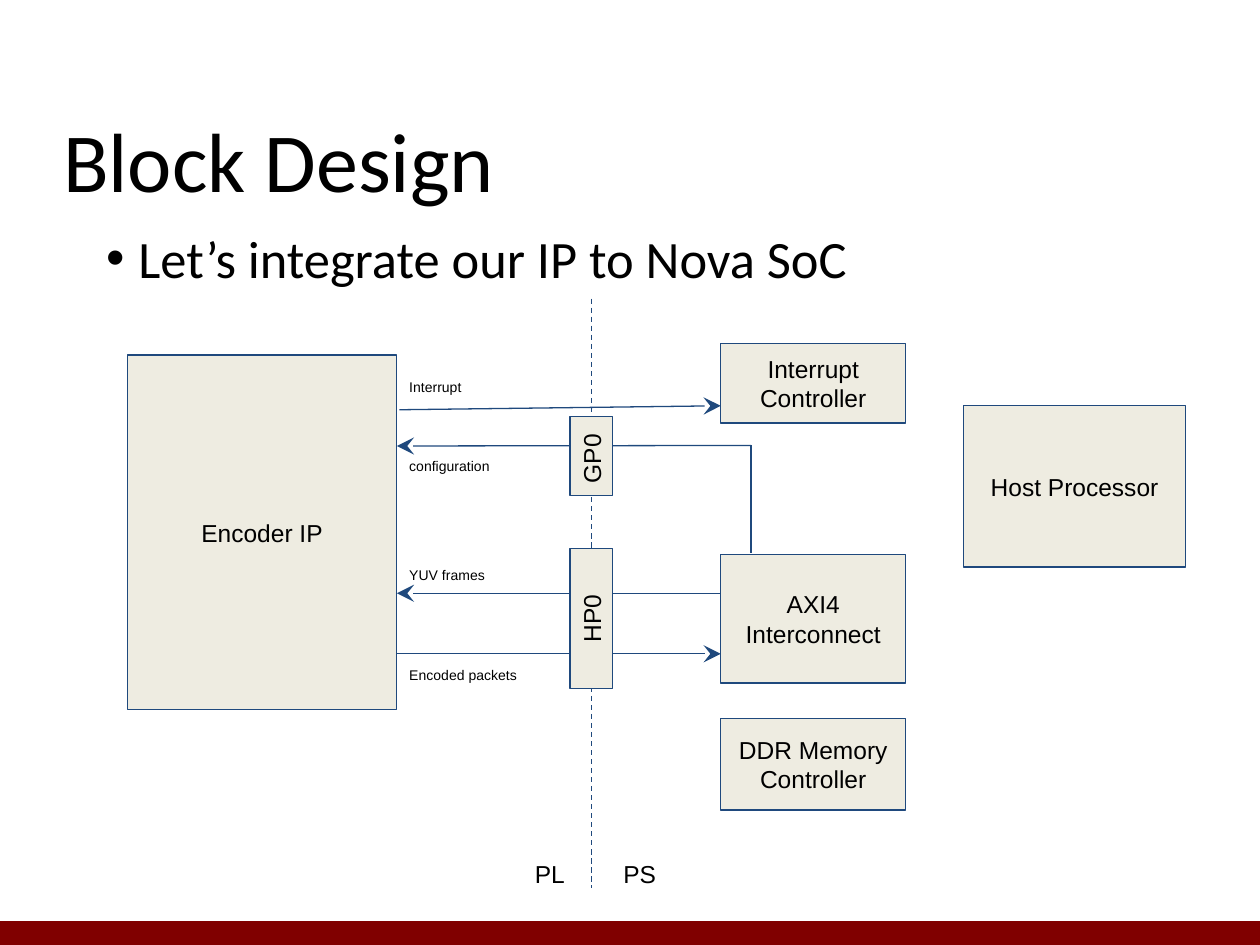
"""Build the block design slide of an encoder connected to a system on chip."""
from lxml import etree
from pptx import Presentation
from pptx.dml.color import RGBColor
from pptx.enum.dml import MSO_LINE
from pptx.enum.shapes import MSO_CONNECTOR, MSO_SHAPE
from pptx.enum.text import MSO_ANCHOR, MSO_AUTO_SIZE, PP_ALIGN
from pptx.oxml.ns import qn
from pptx.util import Cm, Pt

RECTANGLE = MSO_SHAPE.RECTANGLE
STRAIGHT = MSO_CONNECTOR.STRAIGHT
DASH = MSO_LINE.DASH
TOP, MIDDLE = MSO_ANCHOR.TOP, MSO_ANCHOR.MIDDLE
LEFT, CENTER = PP_ALIGN.LEFT, PP_ALIGN.CENTER
NO_FIT = MSO_AUTO_SIZE.NONE

BLACK = RGBColor(0x00, 0x00, 0x00)
NAVY = RGBColor(0x1F, 0x49, 0x7D)
CREAM = RGBColor(0xEE, 0xEC, 0xE1)
MAROON = RGBColor(0x80, 0x00, 0x00)

TITLE = "Block Design"
BULLET = "Let’s integrate our IP to Nova SoC"
TITLE_AREA = (1.27, 2.18, 22.86, 1.85)
BODY_AREA = (1.27, 4.42, 22.86, 12.6)
FOOTER_AREA = (0, 18.57, 25.45, 0.5)

ENCODER_EDGE = 8
CONTROLLER_LEFT, CONTROLLER_WIDTH = 14.53, 3.73
RISER = 15.14
DIVIDER = 11.92
PORT_WIDTH = 0.86

BLOCKS = [
    ("Encoder IP", 2.57, 7.16, ENCODER_EDGE - 2.57, 7.14),
    ("Host Processor", 19.43, 8.18, 4.47, 3.25),
]
CONTROLLERS = [
    ("Interrupt\nController", 6.93, 1.6),
    ("AXI4 Interconnect", 11.18, 2.59),
    ("DDR Memory Controller", 14.48, 1.85),
]
PORTS = [("HP0", 12.47, 2.82, CENTER), ("GP0", 9.19, 1.6, LEFT)]
SIGNALS = [
    ("Interrupt", 7.39),
    ("configuration", 8.97),
    ("YUV frames", 11.18),
    ("Encoded packets", 13.18),
]
SIDES = [("PL", 10.41), ("PS", 12.22)]
ARROWS = [
    (8.05, 8.26, CONTROLLER_LEFT, 8.18),
    (RISER, 8.98, ENCODER_EDGE, 8.99),
    (CONTROLLER_LEFT, 11.96, ENCODER_EDGE, 11.96),
    (ENCODER_EDGE, 13.18, CONTROLLER_LEFT, 13.18),
]


def set_attributes(target, values):
    for name, value in values.items():
        setattr(target, name, value)


def place(shape, area):
    names = ("left", "top", "width", "height")
    set_attributes(shape, dict(zip(names, map(Cm, area))))


def write(shape, text, size, name="Arial", alignment=LEFT, anchor=TOP, insets=(0.25, 0.25)):
    frame = shape.text_frame
    horizontal, vertical = map(Cm, insets)
    frame.text = text
    set_attributes(frame, {
        "word_wrap": True, "auto_size": NO_FIT, "vertical_anchor": anchor,
        "margin_left": horizontal, "margin_right": horizontal,
        "margin_top": vertical, "margin_bottom": vertical,
    })
    for paragraph in frame.paragraphs:
        set_attributes(paragraph, {"alignment": alignment, "space_before": Pt(0)})
        for run in paragraph.runs:
            set_attributes(run.font, {"size": Pt(size), "name": name})
            run.font.color.rgb = BLACK


def add_rectangle(slide, area, fill):
    shape = slide.shapes.add_shape(RECTANGLE, *map(Cm, area))
    shape.shadow.inherit = False
    shape.fill.solid()
    shape.fill.fore_color.rgb = fill
    return shape


def add_block(slide, text, area, alignment=CENTER):
    block = add_rectangle(slide, area, CREAM)
    block.line.color.rgb = NAVY
    block.line.width = Pt(0.75)
    write(block, text, 14, alignment=alignment, anchor=MIDDLE)
    return block


def add_label(slide, text, area, size, alignment=LEFT):
    label = slide.shapes.add_textbox(*map(Cm, area))
    write(label, text, size, alignment=alignment)


def add_line(slide, points, arrow=False):
    connector = slide.shapes.add_connector(STRAIGHT, *map(Cm, points))
    connector.line.color.rgb = NAVY
    connector.line.width = Pt(0.75)
    properties = connector._element.spPr
    if arrow:
        outline = properties.find(qn("a:ln"))
        etree.SubElement(outline, qn("a:tailEnd"), type="stealth", w="lg", len="lg")
    etree.SubElement(properties, qn("a:effectLst"))
    return connector


def add_heading(slide):
    title, body = slide.shapes.title, slide.placeholders[1]
    place(title, TITLE_AREA)
    write(title, TITLE, 48, "Calibri", insets=(0, 0))
    place(body, BODY_AREA)
    write(body, BULLET, 30, "Calibri", insets=(0.25, 0.13))
    properties = body.text_frame.paragraphs[0]._p.get_or_add_pPr()
    properties.set("marL", str(Cm(1.27)))
    properties.set("indent", str(-Cm(0.64)))
    etree.SubElement(properties, qn("a:buFont"), typeface="Arial")
    etree.SubElement(properties, qn("a:buChar"), char="•")


def add_diagram(slide):
    add_line(slide, (DIVIDER, 6.02, DIVIDER, 17.91)).line.dash_style = DASH
    for points in ARROWS:
        add_line(slide, points, arrow=True)
    add_line(slide, (RISER, 8.98, RISER, 11.15))
    for text, *area in BLOCKS:
        add_block(slide, text, area)
    for text, top, height in CONTROLLERS:
        add_block(slide, text, (CONTROLLER_LEFT, top, CONTROLLER_WIDTH, height))
    for text, middle, length, alignment in PORTS:
        area = (DIVIDER - length / 2, middle - PORT_WIDTH / 2, length, PORT_WIDTH)
        add_block(slide, text, area, alignment).rotation = 270
    for text, top in SIGNALS:
        add_label(slide, text, (ENCODER_EDGE, top, 3.6, 0.86), 8)
    for text, left in SIDES:
        add_label(slide, text, (left, 17.07, 1.35, 0.86), 14, CENTER)


def main():
    presentation = Presentation()
    set_attributes(presentation, {"slide_width": Cm(25.4), "slide_height": Cm(19.05)})
    slide = presentation.slides.add_slide(presentation.slide_layouts[1])
    add_rectangle(slide, FOOTER_AREA, MAROON).line.fill.background()
    add_heading(slide)
    add_diagram(slide)
    presentation.save("out.pptx")


if __name__ == "__main__":
    main()
